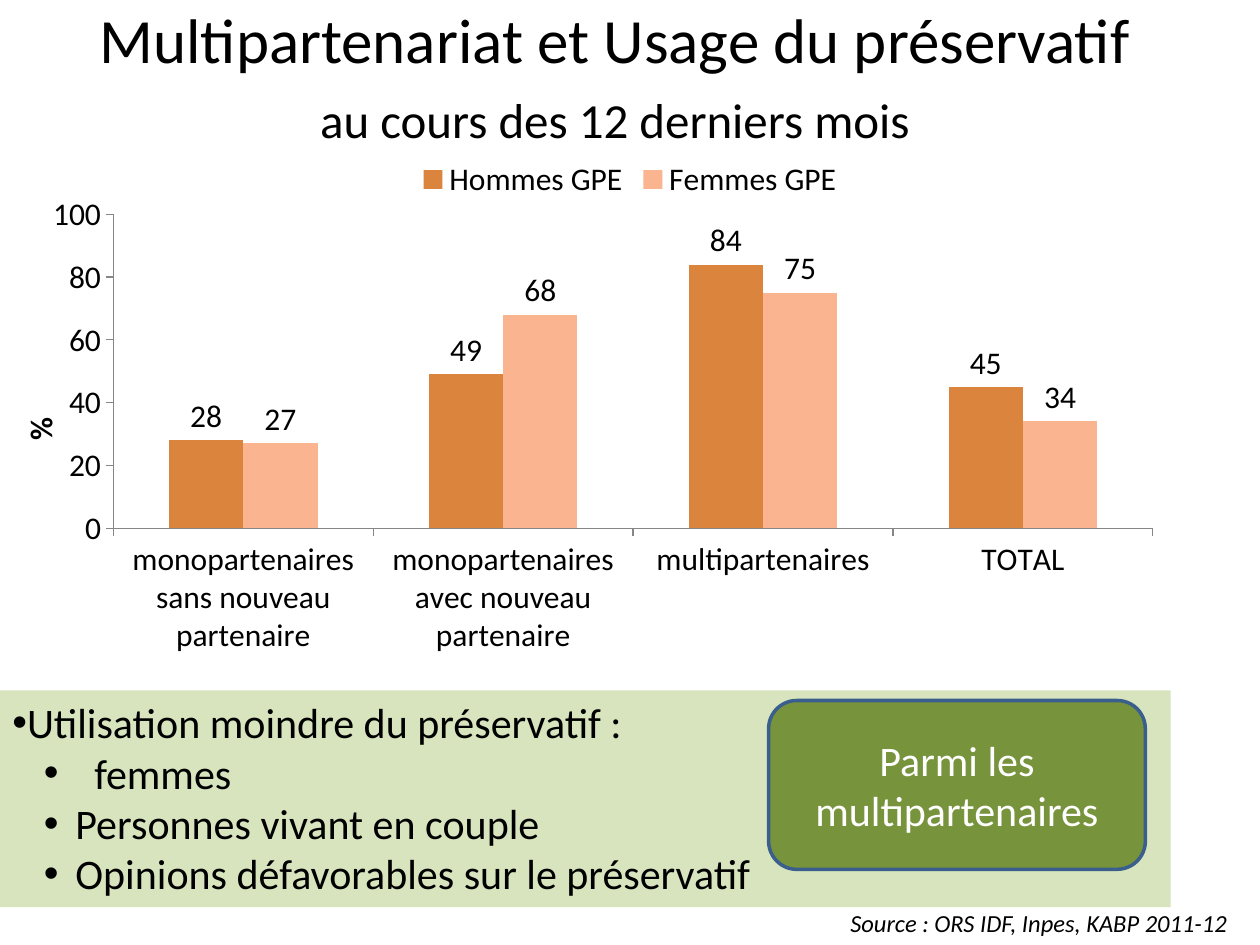
from lxml.etree import SubElement
from pptx import Presentation
from pptx.chart.data import CategoryChartData
from pptx.dml.color import RGBColor
from pptx.enum.chart import XL_CHART_TYPE, XL_LABEL_POSITION, XL_LEGEND_POSITION, XL_TICK_MARK
from pptx.enum.shapes import MSO_SHAPE
from pptx.enum.text import MSO_ANCHOR, PP_ALIGN
from pptx.oxml import parse_xml
from pptx.oxml.ns import nsdecls, qn
from pptx.util import Inches, Pt

TITLE = "Multipartenariat et Usage du préservatif"
SUBTITLE = "au cours des 12 derniers mois"
CATEGORIES = [
    "monopartenaires sans nouveau partenaire",
    "monopartenaires avec nouveau partenaire",
    "multipartenaires",
    "TOTAL",
]
SERIES = [("Hommes GPE", (28, 49, 84, 45)), ("Femmes GPE", (27, 68, 75, 34))]
# text, left margin and hanging indent in inches
FINDINGS = [
    ("Utilisation moindre du préservatif :", 0, 0),
    ("femmes", 0.65, -0.4),
    ("Personnes vivant en couple", 0.5, -0.25),
    ("Opinions défavorables sur le préservatif", 0.5, -0.25),
]
GROUP = "Parmi les multipartenaires"
SOURCE = "Source : ORS IDF, Inpes, KABP 2011-12"

THEME = {
    "font": "Calibri",
    "text": "000000", "inverse": "FFFFFF", "axis": "868686",
    "panel": "D7E4BD", "badge": "77933C", "badge_line": "3A5F8C",
    "series": ("DB843D", "FAB490"),
    "title": 36, "subtitle": 28, "body": 24, "chart": 18, "source": 14,
}


def color(name):
    return RGBColor.from_string(THEME[name])


def style_font(font, size, ink="text", bold=False, italic=False):
    font.name, font.size = THEME["font"], Pt(THEME[size])
    font.bold, font.italic = bold, italic
    font.color.rgb = color(ink)


def write(paragraph, text, size="body", ink="text", align=PP_ALIGN.LEFT,
          italic=False, before=0, bullet=None):
    """Fill a paragraph; bullet is a (margin, indent) pair in inches."""
    run = paragraph.add_run()
    run.text = text
    style_font(run.font, size, ink, italic=italic)
    paragraph.alignment = align
    paragraph.space_before = Pt(before)
    if bullet:
        properties = paragraph._p.get_or_add_pPr()
        for key, length in zip(("marL", "indent"), bullet):
            properties.set(key, str(Inches(length)))
        SubElement(properties, qn("a:buFont"), typeface="Arial")
        SubElement(properties, qn("a:buChar"), char="•")


def add_text_box(slide, left, top, width, height):
    frame = slide.shapes.add_textbox(*map(Inches, (left, top, width, height))).text_frame
    frame.word_wrap = True
    return frame


def add_block(slide, kind, fill, left, top, width, height, line=None):
    block = slide.shapes.add_shape(kind, *map(Inches, (left, top, width, height)))
    block.shadow.inherit = False
    block.fill.solid()
    block.fill.fore_color.rgb = color(fill)
    if line:
        block.line.color.rgb = color(line)
        block.line.width = Pt(2)
    else:
        block.line.fill.background()
    block.text_frame.word_wrap = True
    return block.text_frame


def place(element, index, inner=False, **fractions):
    """Give a chart part a manual layout in fractions of the chart."""
    for old in element.findall(qn("c:layout")):
        element.remove(old)
    parts = '<c:layoutTarget val="inner"/>' if inner else ""
    parts += "".join(f'<c:{axis}Mode val="edge"/>' for axis in "xy")
    parts += "".join(f'<c:{key} val="{value}"/>' for key, value in fractions.items())
    element.insert(index, parse_xml(
        f'<c:layout {nsdecls("c")}><c:manualLayout>{parts}</c:manualLayout></c:layout>'))


def add_usage_chart(slide):
    data = CategoryChartData(number_format="0")
    data.categories = CATEGORIES
    for name, values in SERIES:
        data.add_series(name, values)
    chart = slide.shapes.add_chart(
        XL_CHART_TYPE.COLUMN_CLUSTERED, *map(Inches, (0, 1.15, 10, 4.41)), data).chart
    style_font(chart.font, "chart")
    chart.has_title = False
    chart.has_legend = True
    chart.legend.position = XL_LEGEND_POSITION.TOP
    chart.legend.include_in_layout = False

    plot = chart.plots[0]
    plot.gap_width, plot.overlap, plot.vary_by_categories = 150, 0, False
    for series, fill in zip(plot.series, THEME["series"]):
        series.format.fill.solid()
        series.format.fill.fore_color.rgb = RGBColor.from_string(fill)
        series.data_labels.show_value = True
        series.data_labels.position = XL_LABEL_POSITION.OUTSIDE_END
        style_font(series.data_labels.font, "chart")

    percent = chart.value_axis
    for axis in (chart.category_axis, percent):
        axis.has_major_gridlines = False
        axis.major_tick_mark = XL_TICK_MARK.OUTSIDE
        axis.format.line.color.rgb = color("axis")
        style_font(axis.tick_labels.font, "chart")
    percent.minimum_scale, percent.maximum_scale, percent.major_unit = 0, 100, 20
    unit = percent.axis_title.text_frame
    unit.text = "%"
    unit._txBody.bodyPr.set("rot", "-5400000")
    unit._txBody.bodyPr.set("vert", "horz")
    style_font(unit.paragraphs[0].runs[0].font, "chart", bold=True)
    place(percent.axis_title._element, 1, x=0.01, y=0.48)
    place(chart._chartSpace.chart.plotArea, 0, inner=True, x=0.09, y=0.125, w=0.825, h=0.565)


def main():
    deck = Presentation()
    deck.slide_width, deck.slide_height = Inches(10), Inches(7.5)
    slide = deck.slides.add_slide(deck.slide_layouts[6])

    heading = add_text_box(slide, 0, 0, 9.76, 1.15)
    heading.margin_top = heading.margin_bottom = 0
    write(heading.paragraphs[0], TITLE, "title", align=PP_ALIGN.CENTER)
    write(heading.add_paragraph(), SUBTITLE, "subtitle", align=PP_ALIGN.CENTER, before=8)

    add_usage_chart(slide)

    findings = add_block(slide, MSO_SHAPE.RECTANGLE, "panel", 0, 5.48, 9.29, 1.72)
    findings.vertical_anchor = MSO_ANCHOR.TOP
    for number, (text, margin, indent) in enumerate(FINDINGS):
        paragraph = findings.add_paragraph() if number else findings.paragraphs[0]
        write(paragraph, text, bullet=(margin, indent))

    group = add_block(slide, MSO_SHAPE.ROUNDED_RECTANGLE, "badge",
                      6.1, 5.56, 2.99, 1.34, line="badge_line")
    group.vertical_anchor = MSO_ANCHOR.MIDDLE
    write(group.paragraphs[0], GROUP, ink="inverse", align=PP_ALIGN.CENTER)

    source = add_text_box(slide, 6.65, 7.16, 3.35, 0.34)
    write(source.paragraphs[0], SOURCE, "source", italic=True)

    deck.save("out.pptx")


if __name__ == "__main__":
    main()
